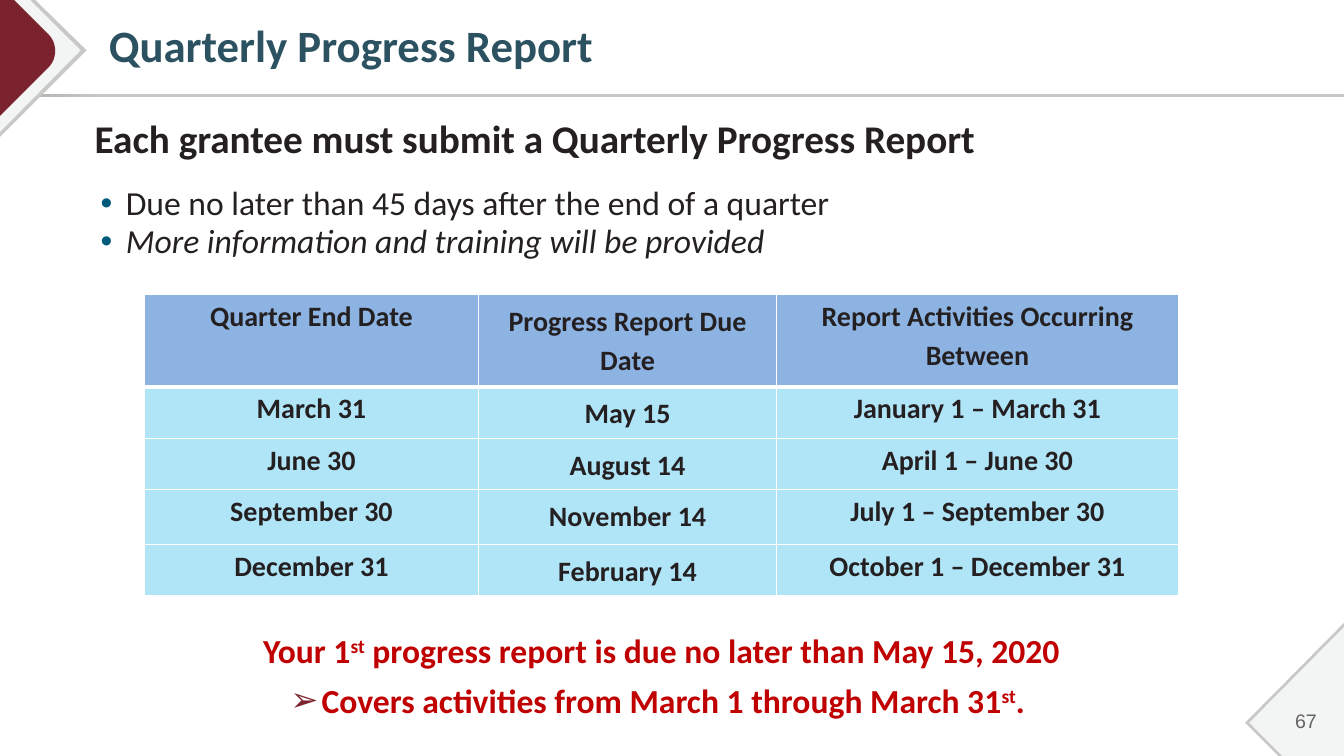
from lxml.etree import SubElement
from pptx import Presentation
from pptx.dml.color import RGBColor
from pptx.enum.shapes import MSO_SHAPE
from pptx.enum.text import MSO_ANCHOR, PP_ALIGN
from pptx.oxml.ns import qn
from pptx.util import Inches, Pt

WHITE = RGBColor(0xFF, 0xFF, 0xFF)
EDGE_GRAY = RGBColor(0xC8, 0xC8, 0xC6)
DARK_GRAY = RGBColor(0xAB, 0xAB, 0xA8)
PALE_GRAY = RGBColor(0xF3, 0xF4, 0xF4)
NUMBER_GRAY = RGBColor(0x64, 0x64, 0x64)
MAROON = RGBColor(0x7A, 0x23, 0x2F)
TITLE_BLUE = RGBColor(0x2C, 0x52, 0x61)
BULLET_BLUE = RGBColor(0x00, 0x5A, 0x7C)
INK = RGBColor(0x24, 0x20, 0x21)
RED = RGBColor(0xC0, 0x00, 0x00)
HEADER_BLUE = RGBColor(0x8D, 0xB3, 0xE2)
ROW_BLUE = RGBColor(0xB0, 0xE4, 0xF7)


def add_text_box(left, top, width, height, anchor=MSO_ANCHOR.TOP):
    text_frame = slide.shapes.add_textbox(
        Inches(left), Inches(top), Inches(width), Inches(height)).text_frame
    text_frame.word_wrap = True
    text_frame.vertical_anchor = anchor
    return text_frame


def write_paragraph(paragraph, pieces, size, color, bold=False, italic=False, font="Calibri",
                    align=PP_ALIGN.LEFT, spacing=1.0, before=0, bullet=None):
    """Fill a paragraph; every second piece is superscript.

    bullet is (character, color, hanging indent in inches).
    """
    if bullet:
        character, bullet_color, hanging = bullet
        properties = paragraph._p.get_or_add_pPr()
        properties.set("marL", str(Inches(0.31)))
        properties.set("indent", str(-Inches(hanging)))
        color_element = SubElement(properties, qn("a:buClr"))
        SubElement(color_element, qn("a:srgbClr"), val=str(bullet_color))
        SubElement(properties, qn("a:buFont"), typeface="Arial")
        SubElement(properties, qn("a:buChar"), char=character)
    paragraph.alignment = align
    paragraph.line_spacing = spacing
    paragraph.space_before = Pt(before)
    for index, piece in enumerate(pieces):
        run = paragraph.add_run()
        run.text = piece
        run.font.name = font
        run.font.size = Pt(size)
        run.font.bold = bold
        run.font.italic = italic
        run.font.color.rgb = color
        if index % 2:
            run._r.get_or_add_rPr().set("baseline", "30000")


presentation = Presentation()
presentation.slide_width = Inches(13.33)
presentation.slide_height = Inches(7.5)
slide = presentation.slides.add_slide(presentation.slide_layouts[6])

# Header rule
rule = slide.shapes.add_shape(
    MSO_SHAPE.RECTANGLE, Inches(0), Inches(0.93), Inches(13.33), Inches(0.03))
rule.shadow.inherit = False
rule.line.fill.background()
rule.fill.gradient()
rule.fill.gradient_angle = 0
for stop, position, color in zip(rule.fill.gradient_stops, (0, 0.08), (DARK_GRAY, EDGE_GRAY)):
    stop.position = position
    stop.color.rgb = color

# Corner diamonds; the maroon one has a rounded tip along a cubic curve
curve = [(0.48, 0.34), (0.57, 0.43), (0.57, 0.58), (0.48, 0.67)]
rounded_tip = []
for step in range(13):
    t = step / 12
    weights = ((1 - t) ** 3, 3 * t * (1 - t) ** 2, 3 * t ** 2 * (1 - t), t ** 3)
    rounded_tip.append(tuple(
        sum(weight * point[axis] for weight, point in zip(weights, curve)) for axis in (0, 1)))

corner_pieces = [
    (EDGE_GRAY, [(13.33, 6.18), (13.33, 7.5), (12.68, 7.5), (12.35, 7.17)]),
    (PALE_GRAY, [(13.33, 6.22), (13.33, 7.5), (12.72, 7.5), (12.39, 7.17)]),
    (EDGE_GRAY, [(0, 0), (0.35, 0), (0.86, 0.5), (0, 1.36)]),
    (PALE_GRAY, [(0, 0), (0.3, 0), (0.8, 0.5), (0, 1.31)]),
    (MAROON, [(0, 0), (0.14, 0), *rounded_tip, (0, 1.15)]),
]
for color, points in corner_pieces:
    corners = [(Inches(x), Inches(y)) for x, y in points]
    builder = slide.shapes.build_freeform(*corners[0])
    builder.add_line_segments(corners[1:], close=True)
    piece = builder.convert_to_shape()
    piece.shadow.inherit = False
    piece.fill.solid()
    piece.fill.fore_color.rgb = color
    piece.line.fill.background()

# Title, body and page number
title = add_text_box(0.88, 0.05, 12.12, 0.86, MSO_ANCHOR.MIDDLE)
title.margin_left = Inches(0.2)
write_paragraph(title.paragraphs[0], ["Quarterly Progress Report"], 32, TITLE_BLUE,
                bold=True, spacing=0.9)

body = add_text_box(0.84, 1.04, 11.44, 1.7)
write_paragraph(body.paragraphs[0], ["Each grantee must submit a Quarterly Progress Report"],
                28, INK, bold=True, spacing=1.1)
dot = ("•", BULLET_BLUE, 0.25)
write_paragraph(body.add_paragraph(), ["Due no later than 45 days after the end of a quarter"],
                24, INK, spacing=1.1, before=12, bullet=dot)
write_paragraph(body.add_paragraph(), ["More information and training will be provided"],
                24, INK, italic=True, spacing=0.95, bullet=dot)

reminder = add_text_box(0.84, 6.23, 11.44, 1.05)
write_paragraph(reminder.paragraphs[0],
                ["Your 1", "st", " progress report is due no later than May 15, 2020"],
                24, RED, bold=True, align=PP_ALIGN.CENTER, spacing=0.95)
write_paragraph(reminder.add_paragraph(),
                ["Covers activities from March 1 through March 31", "st", ". "],
                24, RED, bold=True, align=PP_ALIGN.CENTER, before=6,
                bullet=("➢", MAROON, 0.31))

page_number = add_text_box(12.45, 6.95, 0.71, 0.4, MSO_ANCHOR.MIDDLE)
write_paragraph(page_number.paragraphs[0], ["67"], 14, NUMBER_GRAY, font="Arial",
                align=PP_ALIGN.RIGHT)

# Due date table
schedule = [
    ("Quarter End Date", "Progress Report Due Date", "Report Activities Occurring Between"),
    ("March 31", "May 15", "January 1 – March 31"),
    ("June 30", "August 14", "April 1 – June 30"),
    ("September 30", "November 14", "July 1 – September 30"),
    ("December 31", "February 14", "October 1 – December 31"),
]
table = slide.shapes.add_table(
    5, 3, Inches(1.43), Inches(2.92), Inches(10.26), Inches(2.99)).table
for column, width in zip(table.columns, (3.32, 2.95, 3.99)):
    column.width = Inches(width)
for row, height in zip(table.rows, (0.92, 0.51, 0.51, 0.54, 0.51)):
    row.height = Inches(height)

for row_index, texts in enumerate(schedule):
    for column_index, text in enumerate(texts):
        cell = table.cell(row_index, column_index)
        if column_index != 1:
            cell.margin_left = cell.margin_right = cell.margin_top = cell.margin_bottom = 0
        write_paragraph(cell.text_frame.paragraphs[0], [text], 20, INK, bold=True,
                        align=PP_ALIGN.CENTER, spacing=1.15)
        for side in ("L", "R", "T", "B"):
            under_header = (row_index, side) in ((0, "B"), (1, "T"))
            border = SubElement(cell._tc.get_or_add_tcPr(), qn("a:ln" + side),
                                w=str(Pt(3 if under_header else 1)))
            border_fill = SubElement(border, qn("a:solidFill"))
            SubElement(border_fill, qn("a:srgbClr"), val=str(WHITE))
        cell.fill.solid()
        cell.fill.fore_color.rgb = ROW_BLUE if row_index else HEADER_BLUE

presentation.save("out.pptx")
